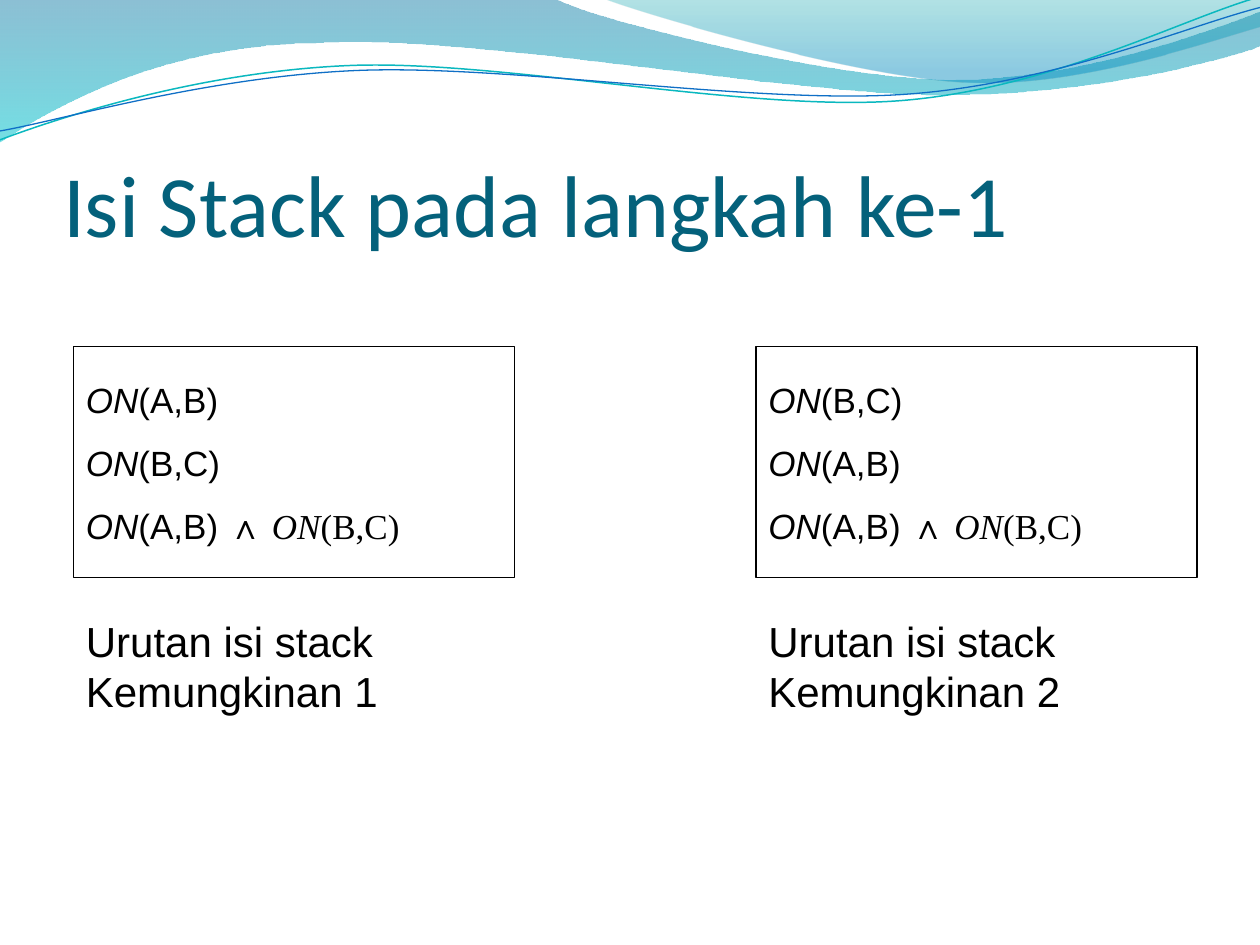
import math

from pptx import Presentation
from pptx.dml.color import RGBColor
from pptx.enum import shapes, text
from pptx.oxml import ns
from pptx.util import Inches, Pt

COLORS = {
    "title": "04617B", "ink": "000000", "paper": "FFFFFF",
    "deep": "0074A1", "aqua": "00C6CF", "teal": "00A1A9", "sky": "008BBF",
    "teal_line": "0AB8BF", "blue_line": "0F6FC6",
}
TILT = -2.7  # degrees, of the strands

# Waves: a start point, then line ends (2 numbers) or Bézier curves (6 numbers)
BANDS = [
    ([(0, -0.01), (4.4, -0.01), (4.76, 0.17, 6.64, 0.63, 7.58, 0.63),
      (8.53, 0.63, 9.58, 0.26, 10, 0.09), (10.01, 0.36),
      (9.83, 0.44, 8.7, 0.76, 7.46, 0.75), (6.22, 0.75, 3.82, 0.28, 2.57, 0.34),
      (1.29, 0.35, 0.46, 0.83, -0.01, 1.13), (0, -0.01)],
     [(0, "deep", 45), (1, "aqua", 55)]),
    ([(4.79, -0.01), (5.09, 0.11, 6.82, 0.62, 7.69, 0.65),
      (8.56, 0.69, 9.61, 0.32, 10, 0.21), (10, 0), (4.79, -0.01)],
     [(0, "teal", 30), (0.8, "sky", 45)]),
]
# Each strand also has the centre it is tilted about
STRANDS = [
    ([(0, 1.11), (0.48, 0.93, 1.58, 0.57, 2.77, 0.52),
      (3.95, 0.47, 5.93, 0.89, 7.13, 0.8), (8.33, 0.71, 9.38, 0.15, 9.98, -0.02)],
     (4.99, 0.57), "teal_line", 0.85),
    ([(0, 1.04), (0.47, 0.96, 1.64, 0.61, 2.83, 0.56),
      (4.03, 0.51, 5.97, 0.83, 7.17, 0.75), (8.36, 0.67, 9.41, 0.21, 10, 0.06)],
     (5, 0.59), "blue_line", 0.75),
]


def rgb(name):
    return RGBColor.from_string(COLORS[name])


def level(segment, centre):
    """Undo the tilt of a segment's points about a centre."""
    a = math.radians(-TILT)
    result = []
    for x, y in zip(segment[::2], segment[1::2]):
        dx, dy = x - centre[0], y - centre[1]
        result += [centre[0] + dx * math.cos(a) - dy * math.sin(a),
                   centre[1] + dx * math.sin(a) + dy * math.cos(a)]
    return result


def add_outline(parent, segments, left, top, close):
    """Draw a freeform through all points, then turn point triples into curves."""
    points = [(left + Inches(x), top + Inches(y))
              for seg in segments for x, y in zip(seg[::2], seg[1::2])]
    builder = parent.shapes.build_freeform(*points[0])
    builder.add_line_segments(points[1:], close=close)
    sp = builder.convert_to_shape()
    sp.shadow.inherit = False
    lines = iter(list(sp._element.iter(ns.qn("a:lnTo"))))
    for seg in segments[1:]:
        first = next(lines)
        if len(seg) == 6:
            curve = first.makeelement(ns.qn("a:cubicBezTo"))
            first.addprevious(curve)
            for line in (first, next(lines), next(lines)):
                curve.append(line[0])
                line.getparent().remove(line)
    return sp


def add_waves(s, left, top):
    for segments, stops in BANDS:
        sp = add_outline(s, segments, left, top, True)
        sp.line.fill.background()
        sp.fill.gradient()
        sp.fill.gradient_angle = 270
        for stop, (position, color, _) in zip(sp.fill.gradient_stops, stops):
            stop.position = position
            stop.color.rgb = rgb(color)
        for clr, (_, _, opacity) in zip(sp._element.iter(ns.qn("a:srgbClr")), stops):
            clr.append(clr.makeelement(ns.qn("a:alpha"), {"val": str(opacity * 1000)}))
    group = s.shapes.add_group_shape()
    for segments, centre, color, width in STRANDS:
        flat = [level(seg, centre) for seg in segments]
        sp = add_outline(group, flat, left, top, False)
        sp.rotation = TILT
        sp.fill.background()
        sp.line.color.rgb = rgb(color)
        sp.line.width = Pt(width)


def set_frame(tf, **values):
    for name, value in {"word_wrap": True, **values}.items():
        setattr(tf, name, value)


def add_run(p, words, size, font="Arial", color="ink", italic=False):
    r = p.add_run()
    r.text = words
    for name, value in {"name": font, "size": Pt(size), "italic": italic}.items():
        setattr(r.font, name, value)
    r.font.color.rgb = rgb(color)


def add_title(s, words, left, top, width, height):
    tf = s.shapes.add_textbox(left, top, width, height).text_frame
    set_frame(tf, vertical_anchor=text.MSO_ANCHOR.BOTTOM,
              margin_left=0, margin_right=0, margin_bottom=0)
    add_run(tf.paragraphs[0], words, 50, "Calibri", "title")


def add_stack(s, goals, caption, left, top, width):
    """Draw a boxed goal stack, ending in the compound goal, over its caption."""
    group = s.shapes.add_group_shape()
    sp = group.shapes.add_shape(shapes.MSO_SHAPE.RECTANGLE, left, top,
                                width, Inches(11 / 6))
    sp.shadow.inherit = False
    sp.fill.solid()
    sp.fill.fore_color.rgb = rgb("paper")
    sp.line.color.rgb = rgb("ink")
    sp.line.width = Pt(0.75)
    tf = sp.text_frame
    set_frame(tf, vertical_anchor=text.MSO_ANCHOR.TOP, margin_top=Inches(0.09))

    simple = [[("ON", "Arial", True), (goal, "Arial", False)] for goal in goals]
    compound = [("ON", "Arial", True), ("(A,B) ", "Arial", False),
                ("∧ ", "Times New Roman", False),
                ("ON", "Times New Roman", True), ("(B,C)", "Times New Roman", False)]
    for i, runs in enumerate(simple + [compound]):
        p = tf.add_paragraph() if i else tf.paragraphs[0]
        p.line_spacing = 1.5
        p.alignment = text.PP_ALIGN.LEFT if runs is compound else text.PP_ALIGN.JUSTIFY
        for words, font, italic in runs:
            add_run(p, words, 20, font, italic=italic)

    box = group.shapes.add_textbox(left, top + Inches(25 / 12), width, Inches(0.91))
    set_frame(box.text_frame, auto_size=text.MSO_AUTO_SIZE.SHAPE_TO_FIT_TEXT)
    add_run(box.text_frame.paragraphs[0], caption, 24)


def main():
    prs = Presentation()
    prs.slide_width, prs.slide_height = Inches(10), Inches(7.5)
    s = prs.slides.add_slide(prs.slide_layouts[6])
    add_waves(s, 0, 0)
    add_title(s, "Isi Stack pada langkah ke-1",
              Inches(0.5), Inches(0.77), Inches(9.08), Inches(1.25))
    stacks = [(7 / 12, ["(A,B)", "(B,C)"]), (6, ["(B,C)", "(A,B)"])]
    for number, (left, goals) in enumerate(stacks, 1):
        add_stack(s, goals, f"Urutan isi stack Kemungkinan {number}",
                  Inches(left), Inches(2.75), Inches(3.5))
    prs.save("out.pptx")


if __name__ == "__main__":
    main()
